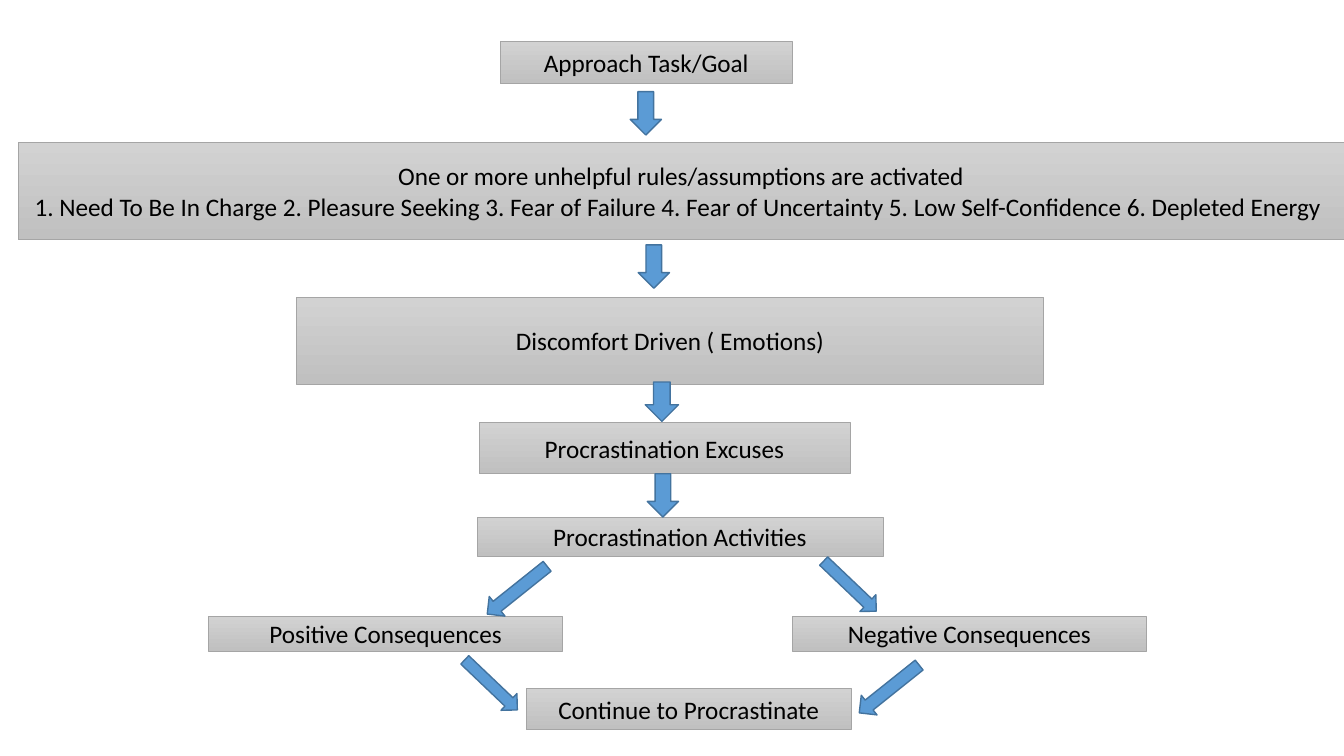
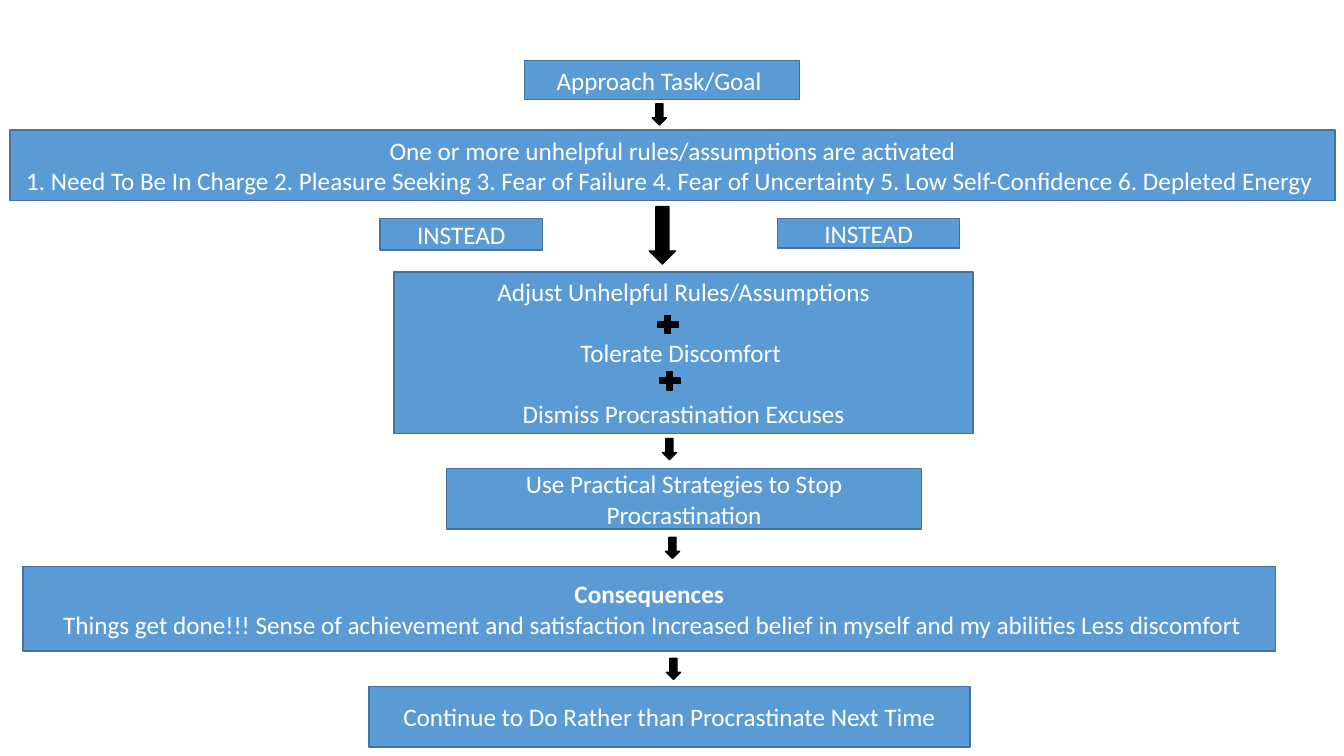
from pptx import Presentation
from pptx.dml.color import RGBColor
from pptx.enum.shapes import MSO_SHAPE
from pptx.enum.text import MSO_ANCHOR, PP_ALIGN
from pptx.util import Inches, Pt

FONT = "Calibri"
BLUE, DARK_BLUE = "5B9BD5", "43739E"
LIGHT_GRAY, MID_GRAY, GRAY = "D2D2D2", "C0C0C0", "A5A5A5"
BLACK, WHITE = "000000", "FFFFFF"
LINE_GAP = 22  # one line of 18 pt text

RULES = [
    "One or more unhelpful rules/assumptions are activated",
    "1. Need To Be In Charge 2. Pleasure Seeking 3. Fear of Failure "
    "4. Fear of Uncertainty 5. Low Self-Confidence 6. Depleted Energy ",
]


def add_shape(slide, kind, box, fills, line, width=1, rotation=0):
    """Draw a preset shape; two fill colours give a top-to-bottom gradient."""
    sp = slide.shapes.add_shape(kind, *[Inches(v) for v in box])
    sp.shadow.inherit = False
    sp.rotation = rotation
    if len(fills) == 2:
        sp.fill.gradient()
        sp.fill.gradient_angle = 270
        for stop, color in zip(sp.fill.gradient_stops, fills):
            stop.color.rgb = RGBColor.from_string(color)
    else:
        sp.fill.solid()
        sp.fill.fore_color.rgb = RGBColor.from_string(fills[0])
    sp.line.color.rgb = RGBColor.from_string(line)
    sp.line.width = Pt(width)
    return sp


def write_text(sp, lines, color, bold_first=False, gap=0):
    """Write one centred paragraph per line, with gap points between them."""
    tf = sp.text_frame
    tf.word_wrap = True
    tf.vertical_anchor = MSO_ANCHOR.MIDDLE
    for i, line in enumerate(lines):
        p = tf.add_paragraph() if i else tf.paragraphs[0]
        p.alignment = PP_ALIGN.CENTER
        p.space_before = Pt(gap if i else 0)
        r = p.add_run()
        r.text = line
        r.font.name = FONT
        r.font.size = Pt(18)
        r.font.bold = bold_first and i == 0
        r.font.color.rgb = RGBColor.from_string(color)


prs = Presentation()
prs.slide_width, prs.slide_height = Inches(13.33), Inches(7.5)
blank = prs.slide_layouts[6]

# Slide 1: the procrastination cycle
s = prs.slides.add_slide(blank)
for box, lines in [
    ((4.96, 0.41, 2.9, 0.42), ["Approach Task/Goal"]),
    ((0.18, 1.41, 13.15, 0.97), RULES),
    ((2.94, 2.95, 7.41, 0.86), ["Discomfort Driven ( Emotions)"]),
    ((4.75, 4.19, 3.68, 0.51), ["Procrastination Excuses"]),
    ((4.73, 5.13, 4.03, 0.39), ["Procrastination Activities"]),
    ((2.07, 6.11, 3.51, 0.35), ["Positive Consequences"]),
    ((7.86, 6.11, 3.51, 0.35), ["Negative Consequences"]),
    ((5.22, 6.83, 3.22, 0.41), ["Continue to Procrastinate"]),
]:
    sp = add_shape(s, MSO_SHAPE.RECTANGLE, box, [LIGHT_GRAY, MID_GRAY], GRAY, 0.5)
    write_text(sp, lines, BLACK)

for kind, box, rotation in [
    (MSO_SHAPE.DOWN_ARROW, (6.25, 0.91, 0.31, 0.43), 0),
    (MSO_SHAPE.DOWN_ARROW, (6.33, 2.43, 0.31, 0.43), 0),
    (MSO_SHAPE.DOWN_ARROW, (6.4, 3.79, 0.33, 0.39), 0),
    (MSO_SHAPE.DOWN_ARROW, (6.42, 4.7, 0.31, 0.43), 0),
    (MSO_SHAPE.LEFT_ARROW, (4.75, 5.73, 0.76, 0.25), 321.4),
    (MSO_SHAPE.RIGHT_ARROW, (8.07, 5.7, 0.72, 0.23), 43.6),
    (MSO_SHAPE.RIGHT_ARROW, (4.51, 6.68, 0.72, 0.23), 43.6),
    (MSO_SHAPE.LEFT_ARROW, (8.44, 6.71, 0.76, 0.25), 321.4),
]:
    add_shape(s, kind, box, [BLUE], DARK_BLUE, rotation=rotation)

# Slide 2: the way out of the cycle
s = prs.slides.add_slide(blank)
for box, lines, text_format in [
    ((5.2, 0.6, 2.73, 0.39), ["Approach Task/Goal "], {}),
    ((0.1, 1.29, 13.14, 0.7), RULES, {}),
    ((3.77, 2.17, 1.61, 0.31), ["INSTEAD"], {}),
    ((7.71, 2.17, 1.81, 0.29), ["INSTEAD"], {}),
    ((3.91, 2.7, 5.74, 1.6),
     ["Adjust Unhelpful Rules/Assumptions", "Tolerate Discomfort ",
      "Dismiss Procrastination Excuses"], {"gap": LINE_GAP}),
    ((4.43, 4.65, 4.71, 0.6),
     ["Use Practical Strategies to Stop Procrastination"], {}),
    ((0.23, 5.62, 12.42, 0.84),
     ["Consequences",
      " Things get done!!! Sense of achievement and satisfaction "
      "Increased belief in myself and my abilities Less discomfort"],
     {"bold_first": True}),
    ((3.66, 6.81, 5.96, 0.6),
     ["Continue to Do Rather than Procrastinate Next Time"], {}),
]:
    sp = add_shape(s, MSO_SHAPE.RECTANGLE, box, [BLUE], DARK_BLUE)
    write_text(sp, lines, WHITE, **text_format)

for kind, size, corners in [
    (MSO_SHAPE.DOWN_ARROW, (0.14, 0.21),
     [(6.47, 1.03), (6.57, 4.35), (6.6, 5.33), (6.61, 6.53)]),
    (MSO_SHAPE.DOWN_ARROW, (0.26, 0.57), [(6.44, 2.05)]),
    (MSO_SHAPE.MATH_PLUS, (0.27, 0.24), [(6.49, 3.1), (6.51, 3.66)]),
]:
    for corner in corners:
        add_shape(s, kind, corner + size, [BLACK], BLACK)

prs.save("out.pptx")
